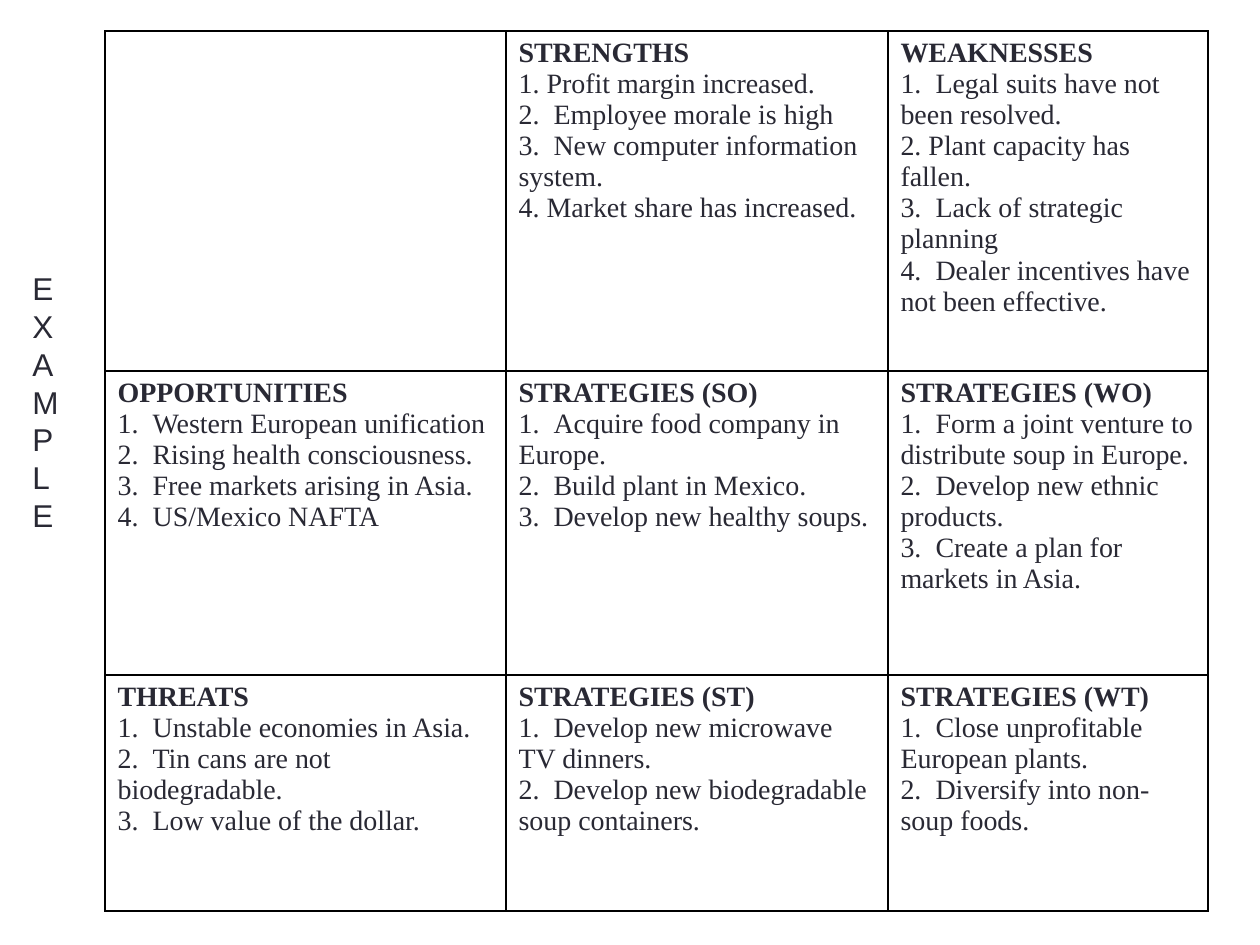
from pptx import Presentation
from pptx import util as u
from pptx.dml.color import RGBColor
from pptx.enum import text
from pptx.oxml import parse_xml
from pptx.oxml.ns import nsdecls

THEME = {
    "ink": RGBColor.from_string("292934"),
    "border": "000000",
    "table_font": "Times New Roman",
    "table_size": u.Pt(16),
    "side_font": "Arial",
    "side_size": u.Pt(18),
}


def px(length):
    """Slide pixels to EMU, 126 to the inch."""
    return u.Emu(round(length * 914400 / 126))


def add_run(paragraph, words, font_name, size, bold=False):
    run = paragraph.add_run()
    run.text = words
    run.font.name = font_name
    run.font.size = size
    run.font.bold = bold
    run.font.color.rgb = THEME["ink"]


presentation = Presentation()
presentation.slide_width, presentation.slide_height = px(1260), px(945)
slide = presentation.slides.add_slide(presentation.slide_layouts[6])

# SWOT matrix: heading first, then the numbered points of each cell
column_widths = [401, 382, 320]
row_heights = [340, 304, 236]
matrix = [
    [
        [],
        ["STRENGTHS", "1. Profit margin increased.", "2.\tEmployee morale is high",
         "3.\tNew computer information system.", "4. Market share has increased."],
        ["WEAKNESSES", "1.\tLegal suits have not been resolved.",
         "2. Plant capacity has fallen.", "3.\tLack of strategic planning",
         "4.\tDealer incentives have not been effective."],
    ],
    [
        ["OPPORTUNITIES", "1.\tWestern European unification",
         "2.\tRising health consciousness.", "3.\tFree markets arising in Asia.",
         "4.\tUS/Mexico NAFTA"],
        ["STRATEGIES (SO)", "1.\tAcquire food company in Europe.",
         "2.\tBuild plant in Mexico.", "3.\tDevelop new healthy soups."],
        ["STRATEGIES (WO)", "1.\tForm a joint venture to distribute soup in Europe.",
         "2.\tDevelop new ethnic products.", "3.\tCreate a plan for markets in Asia."],
    ],
    [
        ["THREATS", "1.\tUnstable economies in Asia.",
         "2.\tTin cans are not biodegradable.", "3.\tLow value of the dollar."],
        ["STRATEGIES (ST)", "1.\tDevelop new microwave TV dinners.",
         "2.\tDevelop new biodegradable soup containers."],
        ["STRATEGIES (WT)", "1.\tClose unprofitable European plants.",
         "2.\tDiversify into non-soup foods."],
    ],
]
table = slide.shapes.add_table(
    len(row_heights), len(column_widths), px(105), px(31),
    px(sum(column_widths)), px(sum(row_heights))).table
table.first_row = table.horz_banding = False
for column, width in zip(table.columns, column_widths):
    column.width = px(width)
for row, height in zip(table.rows, row_heights):
    row.height = px(height)

for row, row_lines in zip(table.rows, matrix):
    for cell, lines in zip(row.cells, row_lines):
        # Thin border on all four sides, no fill
        properties = cell._tc.get_or_add_tcPr()
        for side in ("lnL", "lnR", "lnT", "lnB"):
            properties.append(parse_xml(
                f'<a:{side} {nsdecls("a")} w="{u.Pt(1)}"><a:solidFill>'
                f'<a:srgbClr val="{THEME["border"]}"/></a:solidFill></a:{side}>'))
        cell.fill.background()

        for index, line in enumerate(lines):
            frame = cell.text_frame
            paragraph = frame.add_paragraph() if index else frame.paragraphs[0]
            if "\t" in line:
                paragraph._p.get_or_add_pPr().append(parse_xml(
                    f'<a:tabLst {nsdecls("a")}><a:tab pos="{u.Pt(20)}" algn="l"/></a:tabLst>'))
            add_run(paragraph, line, THEME["table_font"], THEME["table_size"],
                    bold=index == 0)

# Side label, one letter to a line
label = slide.shapes.add_textbox(px(20), px(263), px(53), px(292))
frame = label.text_frame
frame.word_wrap = False
frame.vertical_anchor = text.MSO_ANCHOR.TOP
for index, letter in enumerate("EXAMPLE"):
    paragraph = frame.add_paragraph() if index else frame.paragraphs[0]
    paragraph.alignment = text.PP_ALIGN.LEFT
    paragraph.line_spacing = u.Pt(21.6)
    add_run(paragraph, letter, THEME["side_font"], THEME["side_size"])

presentation.save("out.pptx")
